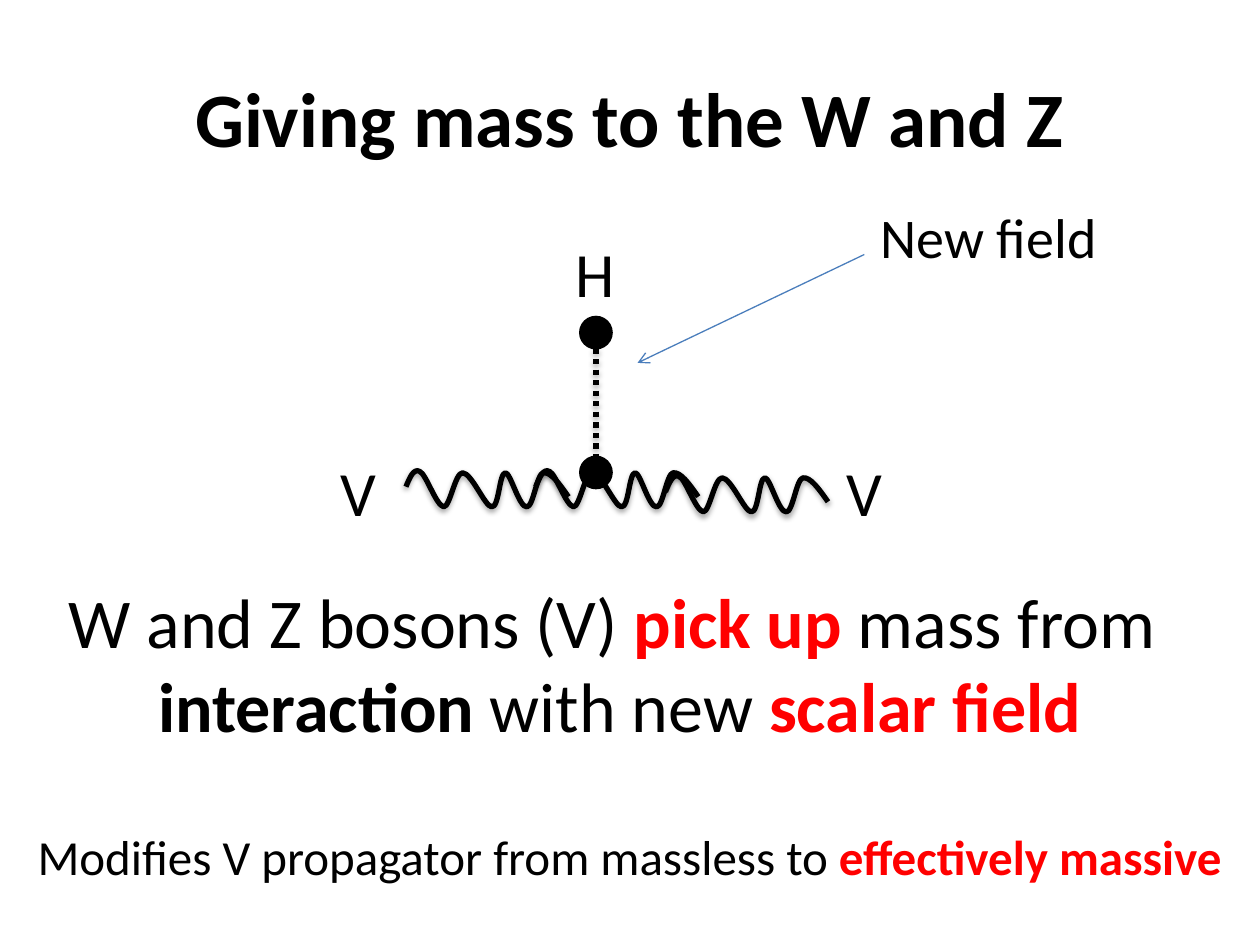
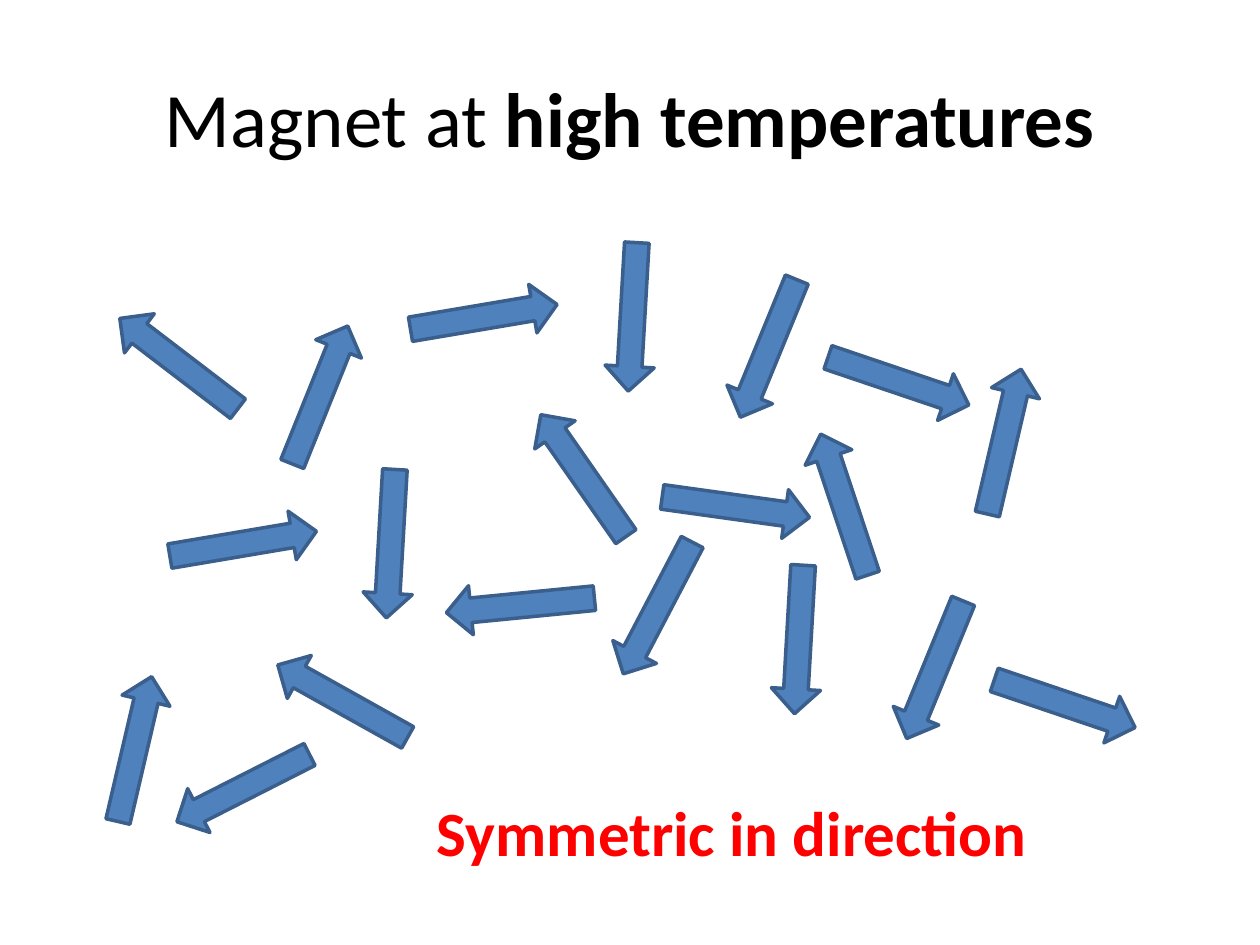
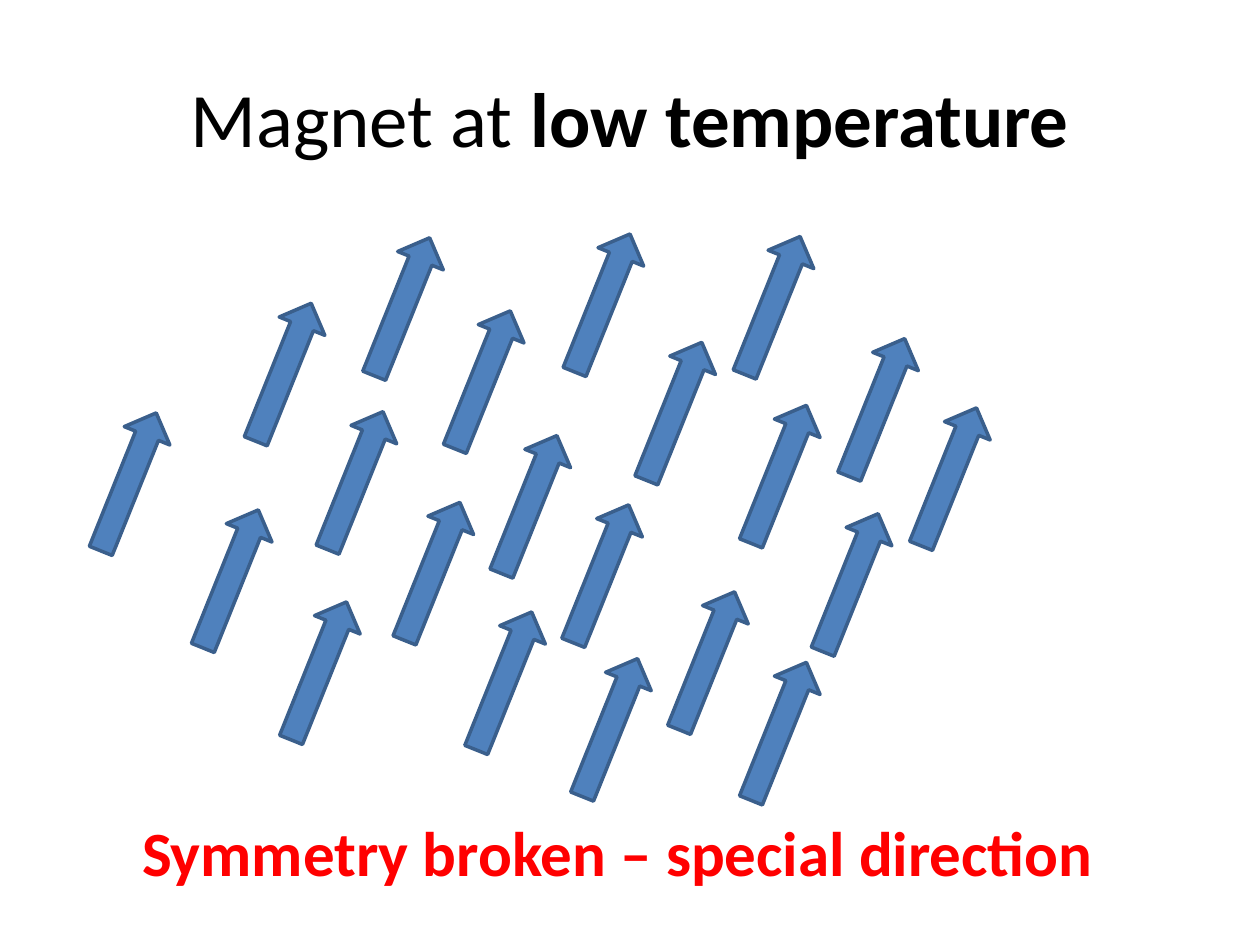
"""Build three slides on the Higgs mechanism and the magnet analogy."""
from math import cos, radians, sin

from lxml import etree
from pptx import Presentation
from pptx.dml.color import RGBColor
from pptx.enum.dml import MSO_LINE
from pptx.enum.shapes import MSO_CONNECTOR, MSO_SHAPE
from pptx.enum.text import MSO_ANCHOR, MSO_AUTO_SIZE, PP_ALIGN
from pptx.oxml.ns import qn
from pptx.util import Inches, Pt

STRAIGHT = MSO_CONNECTOR.STRAIGHT
OVAL, ARROW = MSO_SHAPE.OVAL, MSO_SHAPE.RIGHT_ARROW
LEFT, CENTER = PP_ALIGN.LEFT, PP_ALIGN.CENTER
MIDDLE = MSO_ANCHOR.MIDDLE
FIT_SHAPE = MSO_AUTO_SIZE.SHAPE_TO_FIT_TEXT
DOTTED = MSO_LINE.ROUND_DOT
BLACK, RED, BLUE, NAVY, STEEL = "000000", "FF0000", "4F81BD", "3A5F8C", "4B7EBC"
FONT = "Calibri"
TITLE_BOX = (0.5, 0.3, 9, 1.25)
rgb = RGBColor.from_string


def add_text(s, box, size, paragraphs, align=LEFT, title=False):
    tf = s.shapes.add_textbox(*map(Inches, box)).text_frame
    tf.word_wrap = title
    if title:
        tf.vertical_anchor = MIDDLE
    else:
        tf.auto_size = FIT_SHAPE
    for i, runs in enumerate(paragraphs):
        p = tf.paragraphs[0] if i == 0 else tf.add_paragraph()
        p.alignment = align
        for text, bold, color in runs:
            r = p.add_run()
            r.text = text
            for name, value in {"name": FONT, "size": Pt(size), "bold": bold}.items():
                setattr(r.font, name, value)
            r.font.color.rgb = rgb(color)


def style(sp, line, width, fill=None, shadow=False):
    if fill:
        sp.fill.solid()
        sp.fill.fore_color.rgb = rgb(fill)
    sp.line.color.rgb = rgb(line)
    sp.line.width = Pt(width)
    effects = etree.SubElement(sp._element.spPr, qn("a:effectLst"))
    if shadow:
        outer = etree.SubElement(effects, qn("a:outerShdw"), blurRad=str(Pt(3.1)),
                                 dist=str(Pt(1.8)), dir="5400000", rotWithShape="0")
        color = etree.SubElement(outer, qn("a:srgbClr"), val=BLACK)
        etree.SubElement(color, qn("a:alpha"), val="35000")


prs = Presentation()
prs.slide_width, prs.slide_height = Inches(10), Inches(7.5)
blank = prs.slide_layouts[6]

titles = [
    [("Giving mass to the W and Z", True, BLACK)],
    [("Magnet at ", False, BLACK), ("high temperatures", True, BLACK)],
    [("Magnet at ", False, BLACK), ("low temperature", True, BLACK)],
]
for title in titles:
    add_text(prs.slides.add_slide(blank), TITLE_BOX, 44, [title], CENTER, True)
higgs, hot, cold = prs.slides

scalar = higgs.shapes.add_connector(STRAIGHT, *map(Inches, (4.73, 2.6, 4.73, 3.79)))
style(scalar, BLACK, 3, shadow=True)
scalar.line.dash_style = DOTTED

for label, left, top, width in [("H", 4.47, 1.81, 0.52), ("V", 2.6, 3.55, 0.49), ("V", 6.62, 3.55, 0.49)]:
    add_text(higgs, (left, top, width, 0.71), 36, [[(label, False, BLACK)]])

tilt = 30.5
center_x, center_y = 3.89, 3.87
wave = [
    (3.23, 3.86),
    (3.26, 3.79), (3.29, 3.71), (3.34, 3.74),
    (3.39, 3.76), (3.47, 4.01), (3.53, 4.02),
    (3.58, 4.02), (3.62, 3.75), (3.68, 3.75),
    (3.75, 3.75), (3.86, 4.02), (3.91, 4.02),
    (3.97, 4.03), (3.97, 3.75), (4.02, 3.75),
    (4.06, 3.75), (4.13, 4.03), (4.19, 4.02),
    (4.24, 4.02), (4.27, 3.76), (4.32, 3.75),
    (4.38, 3.74), (4.45, 3.84), (4.52, 3.94),
]
cos_t, sin_t = cos(radians(tilt)), sin(radians(tilt))
for shift_x, shift_y in [(0, 0), (1.03, 0), (2.06, 0.04)]:
    points = []
    for x, y in wave:
        dx, dy = x - center_x, y - center_y
        points.append((Inches(center_x + shift_x + dx * cos_t + dy * sin_t),
                       Inches(center_y + shift_y - dx * sin_t + dy * cos_t)))
    builder = higgs.shapes.build_freeform(*points[0])
    builder.add_line_segments(points[1:], close=False)
    sp = builder.convert_to_shape()
    outline = sp._element.find(".//" + qn("a:path"))
    segments = outline.findall(qn("a:lnTo"))
    for i in range(0, len(segments), 3):
        curve = etree.SubElement(outline, qn("a:cubicBezTo"))
        for segment in segments[i:i + 3]:
            curve.append(segment[0])
            outline.remove(segment)
    sp.rotation = tilt
    sp.fill.background()
    style(sp, BLACK, 3, shadow=True)

for top in (3.63, 2.52):
    dot = higgs.shapes.add_shape(OVAL, *map(Inches, (4.61, top, 0.24, 0.24)))
    style(dot, BLACK, 2, BLACK)

add_text(higgs, (0.4, 4.54, 9.04, 1.45), 40, [
    [("W and Z bosons (V) ", False, BLACK), ("pick up ", True, RED), ("mass from ", False, BLACK)],
    [("interaction", True, BLACK), (" with new ", False, BLACK), ("scalar field", True, RED)],
], CENTER)
add_text(higgs, (0.2, 6.51, 9.72, 0.57), 28, [
    [("Modifies V propagator from massless to ", False, BLACK), ("effectively massive", True, RED)],
])

pointer = higgs.shapes.add_connector(STRAIGHT, *map(Inches, (6.86, 2.02, 5.06, 2.88)))
style(pointer, STEEL, 0.75)
etree.SubElement(pointer.line._get_or_add_ln(), qn("a:tailEnd"), type="arrow")
add_text(higgs, (6.89, 1.56, 1.94, 0.64), 32, [[("New field", False, BLACK)]])

hot_spins = [
    (1.34, 4.12, 350.4), (2.51, 4.12, 93.3), (2.13, 5.37, 209.2), (4.63, 4.63, 117.6),
    (3.54, 4.61, 174.4), (5.25, 3.83, 7.9), (3.25, 2.32, 350.4), (4.43, 2.32, 93.3),
    (4.04, 3.58, 235.1), (6.54, 2.83, 18.7), (5.51, 2.57, 112.3), (6.11, 3.81, 251.6),
    (7.38, 3.31, 283.1), (0.48, 5.75, 283.1), (5.75, 4.88, 93.3), (7.86, 5.39, 18.7),
    (6.83, 5.12, 112.3), (1.34, 6.06, 153.1), (0.83, 2.69, 217.4), (1.95, 2.94, 291.9),
]
aligned = 291.9
cold_places = [
    (1.66, 2.76), (2.23, 3.62), (2.6, 2.24), (3.24, 2.82), (2.84, 4.34), (3.61, 3.81),
    (4.18, 4.36), (4.19, 2.21), (4.76, 3.07), (5.54, 2.23), (5.59, 3.57), (6.16, 4.43),
    (6.37, 3.04), (6.94, 3.59), (5.02, 5.05), (3.41, 5.21), (4.25, 5.58), (5.59, 5.61),
    (0.43, 3.63), (1.24, 4.4), (1.94, 5.13),
]
cold_spins = [(left, top, aligned) for left, top in cold_places]
magnets = [
    (hot, hot_spins, (3.37, 6.25, 4.94, 0.71), "Symmetric in direction"),
    (cold, cold_spins, (1.03, 6.41, 7.83, 0.71), "Symmetry broken – special direction"),
]
for s, spins, box, caption in magnets:
    for left, top, angle in spins:
        sp = s.shapes.add_shape(ARROW, *map(Inches, (left, top, 1.18, 0.39)))
        sp.rotation = angle
        style(sp, NAVY, 2, BLUE)
    add_text(s, box, 36, [[(caption, True, RED)]])

prs.save("out.pptx")
